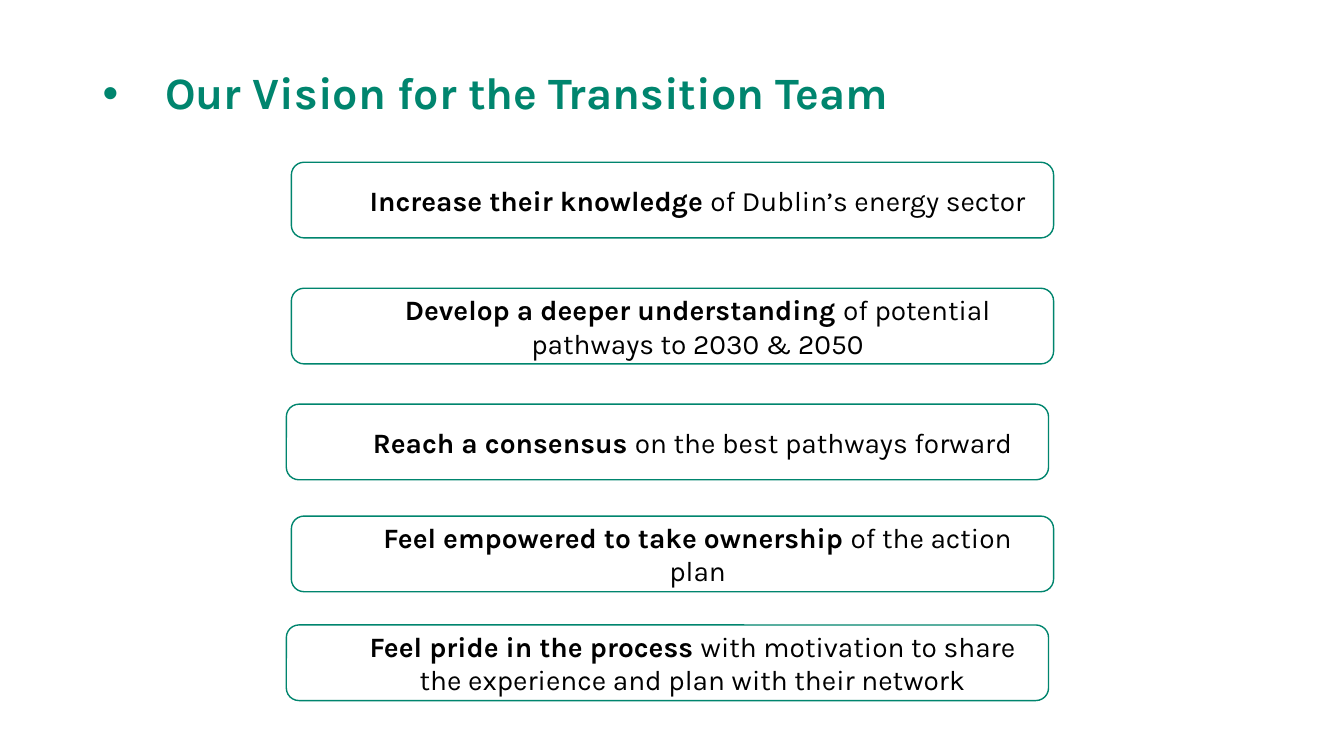
from lxml import etree
from pptx import Presentation
from pptx.dml.color import RGBColor
from pptx.enum.shapes import MSO_SHAPE
from pptx.enum.text import MSO_ANCHOR, PP_ALIGN
from pptx.oxml.ns import qn
from pptx.util import Inches, Pt

ROUNDED = MSO_SHAPE.ROUNDED_RECTANGLE
MIDDLE = MSO_ANCHOR.MIDDLE
CENTER = PP_ALIGN.CENTER
GREEN = RGBColor(0x00, 0x85, 0x6E)
BLACK = RGBColor(0x00, 0x00, 0x00)
FONT = "Karla"

LEFT, INSET_LEFT = 2.89, 2.84
BOX_W, BOX_H = 7.56, 0.75
GOALS = [
    (LEFT, 1.61, "Increase their knowledge ", "of Dublin’s energy sector"),
    (LEFT, 2.86, "Develop a deeper understanding ", "of potential pathways to 2030 & 2050"),
    (INSET_LEFT, 4.01, "Reach a consensus ", "on the best pathways forward"),
    (LEFT, 5.12, "Feel empowered to take ownership ", "of the action plan"),
    (INSET_LEFT, 6.2, "Feel pride in the process ",
     "with motivation to share the experience and plan with their network"),
]


def add_run(p, text, size, color, bold):
    r = p.add_run()
    r.text = text
    r.font.name = FONT
    r.font.size = Pt(size)
    r.font.bold = bold
    r.font.color.rgb = color


def set_indent(p, margin, first):
    pPr = p._p.get_or_add_pPr()
    pPr.set("marL", str(Inches(margin)))
    pPr.set("indent", str(Inches(first)))
    return pPr


prs = Presentation()
prs.slide_width = Inches(13.33)
prs.slide_height = Inches(7.5)
s = prs.slides.add_slide(prs.slide_layouts[6])

tf = s.shapes.add_textbox(Inches(0.92), Inches(0.22), Inches(11.5), Inches(1.45)).text_frame
tf.word_wrap = True
tf.vertical_anchor = MIDDLE
p = tf.paragraphs[0]
p.line_spacing = 0.9
pPr = set_indent(p, 0.62, -0.62)
etree.SubElement(pPr, qn("a:buFont")).set("typeface", "Arial")
etree.SubElement(pPr, qn("a:buChar")).set("char", "•")
add_run(p, "Our Vision for the Transition Team", 32, GREEN, True)

for left, top, lead, rest in GOALS:
    sp = s.shapes.add_shape(ROUNDED, Inches(left), Inches(top), Inches(BOX_W), Inches(BOX_H))
    sp.shadow.inherit = False
    sp.fill.background()
    sp.line.color.rgb = GREEN
    sp.line.width = Pt(1)
    tf = sp.text_frame
    tf.word_wrap = True
    tf.vertical_anchor = MIDDLE
    p = tf.paragraphs[0]
    p.alignment = CENTER
    set_indent(p, 0.5, 0)
    add_run(p, lead, 20, BLACK, True)
    add_run(p, rest, 20, BLACK, False)

prs.save("out.pptx")
